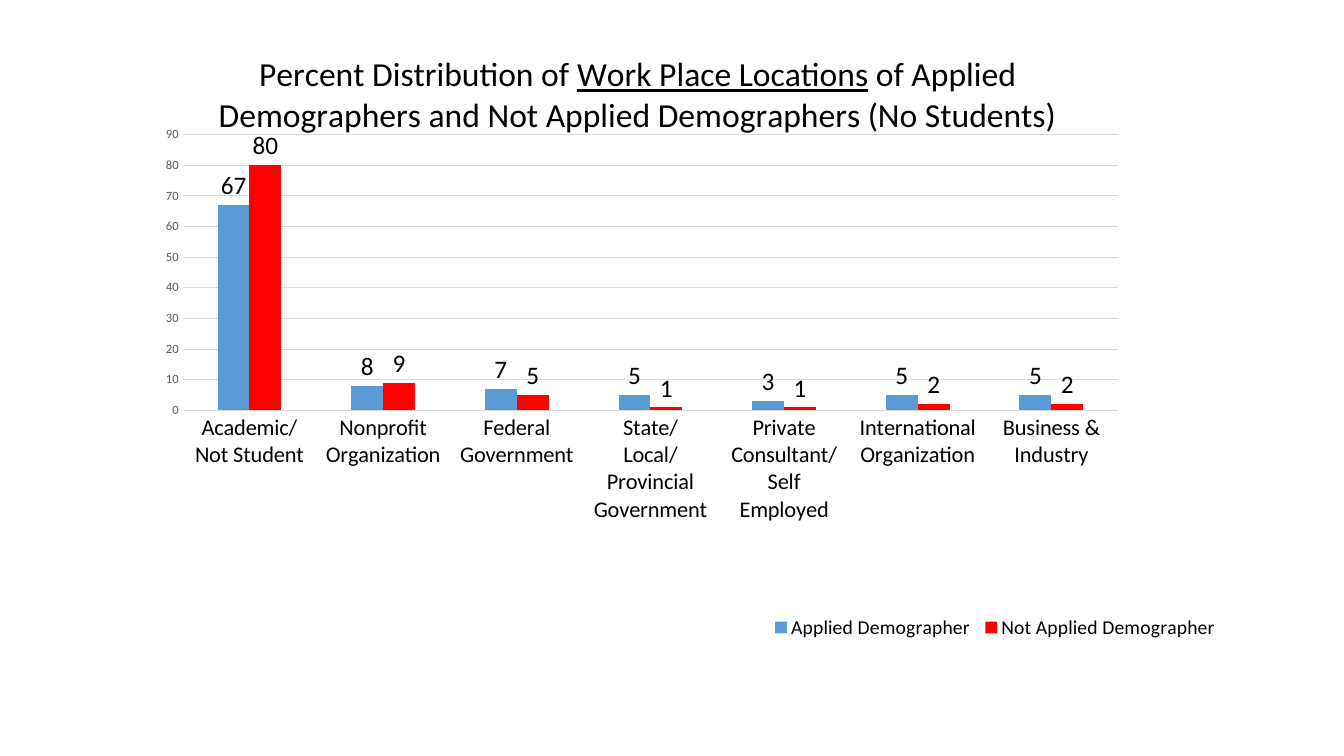
from lxml import etree
from pptx import Presentation
from pptx.chart.data import CategoryChartData
from pptx.dml.color import RGBColor
from pptx.enum.chart import (XL_CHART_TYPE, XL_LABEL_POSITION as LABEL_POS,
                             XL_LEGEND_POSITION as LEGEND_POS, XL_TICK_MARK as TICK)
from pptx.oxml.ns import qn
from pptx.util import Pt


def style(font, size, color="000000"):
    font.name = "Calibri"
    font.size = Pt(size)
    font.bold = False
    font.color.rgb = RGBColor.from_string(color)


def add_layout(parent, index, settings):
    """Place a chart part by fractions of the chart area."""
    for old in parent.findall(qn("c:layout")):
        parent.remove(old)
    layout = etree.Element(qn("c:layout"))
    manual = etree.SubElement(layout, qn("c:manualLayout"))
    for tag, value in settings.items():
        etree.SubElement(manual, qn(f"c:{tag}")).set("val", str(value))
    parent.insert(index, layout)


prs = Presentation()
prs.slide_width, prs.slide_height = Pt(960), Pt(540)
slide = prs.slides.add_slide(prs.slide_layouts[6])

# Data
locations = CategoryChartData(number_format="0")
locations.categories = [
    "Academic/Not Student", "Nonprofit Organization", "Federal Government",
    "State/Local/Provincial Government", "Private Consultant/Self Employed",
    "International Organization", "Business & Industry",
]
locations.add_series("Applied Demographer", [67, 8, 7, 5, 3, 5, 5])
locations.add_series("Not Applied Demographer", [80, 9, 5, 1, 1, 2, 2])

chart = slide.shapes.add_chart(
    XL_CHART_TYPE.COLUMN_CLUSTERED, Pt(36.7), Pt(23), Pt(837.4), Pt(457.2), locations).chart
style(chart.font, 10)

# Title, with the topic underlined
heading = chart.chart_title.text_frame.paragraphs[0]
style(heading.font, 24)
for text, underlined in [
    ("Percent Distribution of ", False),
    ("Work Place Locations", True),
    (" of Applied Demographers and Not Applied Demographers (No Students)", False),
]:
    run = heading.add_run()
    run.text = text
    style(run.font, 24)
    run.font.underline = underlined
chart.chart_title.include_in_layout = False

# Columns and their labels
columns = chart.plots[0]
columns.gap_width = 219
columns.overlap = 0
columns.vary_by_categories = False
for series, color in zip(columns.series, ["5B9BD5", "FF0000"]):
    series.format.fill.solid()
    series.format.fill.fore_color.rgb = RGBColor.from_string(color)
    labels = series.data_labels
    labels.show_value = True
    labels.position = LABEL_POS.OUTSIDE_END
    labels.number_format = "0"
    labels.number_format_is_linked = False
    style(labels.font, 18)

# Axes
locations_axis, percent_axis = chart.category_axis, chart.value_axis
for axis in (locations_axis, percent_axis):
    axis.major_tick_mark = axis.minor_tick_mark = TICK.NONE
style(locations_axis.tick_labels.font, 16)
style(percent_axis.tick_labels.font, 9, "595959")
percent_axis.minimum_scale, percent_axis.maximum_scale = 0, 90
percent_axis.major_unit = 10
percent_axis.tick_labels.number_format = "0"
percent_axis.tick_labels.number_format_is_linked = False
percent_axis.format.line.fill.background()
for line in (locations_axis.format.line, percent_axis.major_gridlines.format.line):
    line.color.rgb = RGBColor.from_string("D9D9D9")
    line.width = Pt(0.75)

# Legend
chart.has_legend = True
legend = chart.legend
legend.position = LEGEND_POS.RIGHT
legend.include_in_layout = False
style(legend.font, 14)

# Places of the plot and the legend
add_layout(chart.plots[0]._element.getparent(), 0, {
    "layoutTarget": "inner", "xMode": "edge", "yMode": "edge",
    "x": 0.112, "y": 0.16, "w": 0.798, "h": 0.431})
add_layout(legend._element, 1, {
    "xMode": "edge", "yMode": "edge", "x": 0.61, "y": 0.9, "w": 0.39, "h": 0.06})

prs.save("out.pptx")
